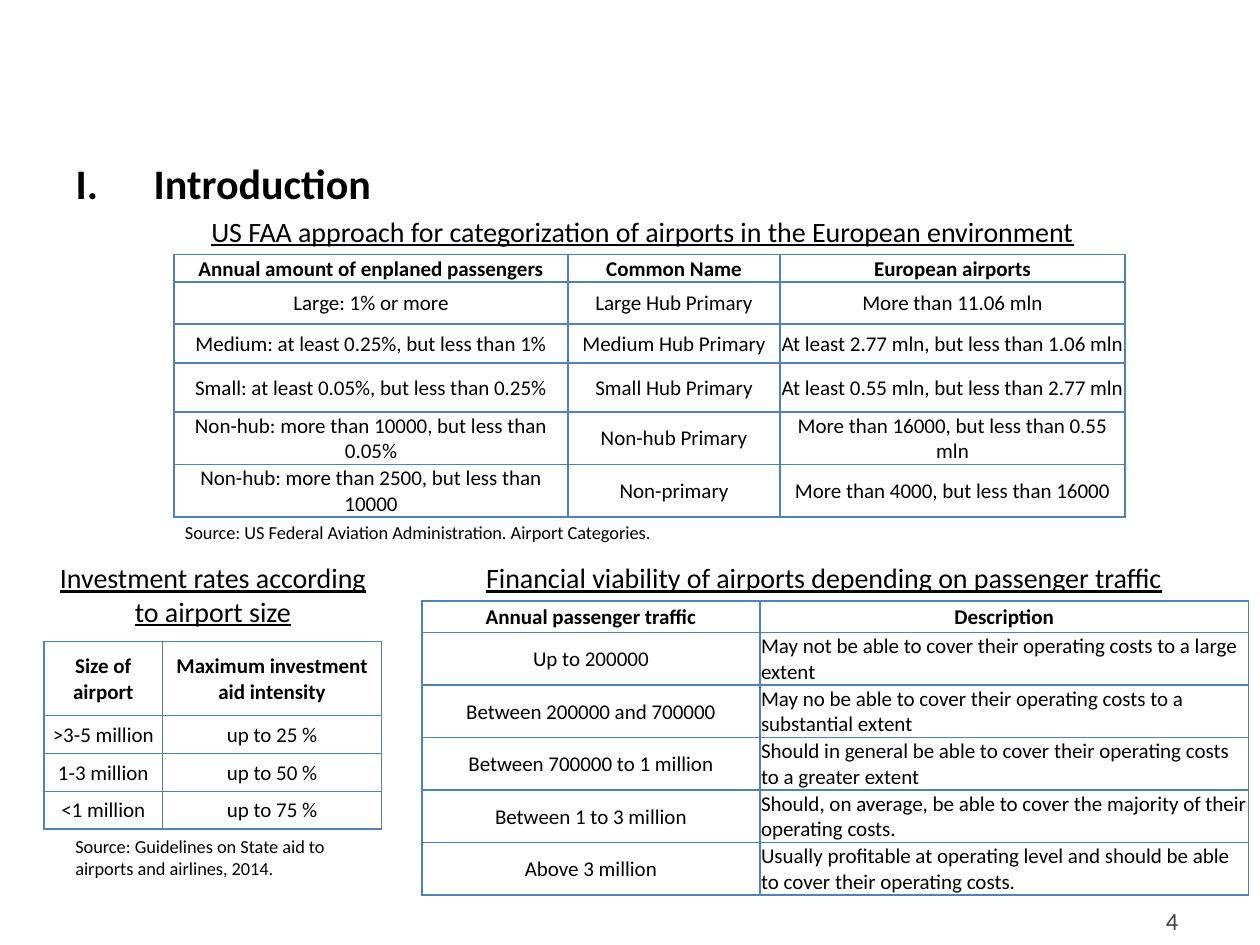
from dataclasses import dataclass

from lxml.etree import SubElement
from pptx import Presentation
from pptx.dml.color import RGBColor
from pptx.enum.text import MSO_ANCHOR, MSO_AUTO_SIZE, PP_ALIGN
from pptx.oxml.ns import qn
from pptx.slide import Slide
from pptx.table import _Cell
from pptx.text.text import _Paragraph
from pptx.util import Inches, Length, Pt


@dataclass(frozen=True)
class Theme:
    font: str = "Calibri"
    ink: str = "000000"
    muted: str = "404040"
    rule: str = "4F81BD"
    rule_width: int = 1
    title: float = 24
    heading: float = 16
    number: float = 14
    cell: float = 12
    source: float = 10.5


@dataclass(frozen=True)
class Area:
    left: float
    top: float
    width: float
    height: float

    def lengths(self) -> tuple[Length, ...]:
        return tuple(map(grid, (self.left, self.top, self.width, self.height)))


@dataclass(frozen=True)
class Label:
    text: str
    area: Area
    size: float
    align: PP_ALIGN = PP_ALIGN.LEFT
    underline: bool = False
    color: str = Theme.ink
    anchor: MSO_ANCHOR = MSO_ANCHOR.TOP


@dataclass(frozen=True)
class TableData:
    left: float
    top: float
    columns: tuple[float, ...]
    rows: tuple[float, ...]
    aligns: tuple[PP_ALIGN, ...]
    cells: tuple[tuple[str, ...], ...]


THEME = Theme()
GRID_COLUMNS, GRID_ROWS = 100, 75
CENTER, LEFT, RIGHT = PP_ALIGN.CENTER, PP_ALIGN.LEFT, PP_ALIGN.RIGHT

LABELS = (
    Label("US FAA approach for categorization of airports in the European environment",
          Area(14.1, 16.5, 73.8, 3.7), THEME.heading, CENTER, True),
    Label("Investment rates according to airport size",
          Area(3.5, 44, 26.8, 6.4), THEME.heading, CENTER, True),
    Label("Financial viability of airports depending on passenger traffic",
          Area(37.5, 44, 55.8, 3.7), THEME.heading, CENTER, True),
    Label("Source: US Federal Aviation Administration. Airport Categories.",
          Area(13.7, 40.9, 50, 2.9), THEME.source),
    Label("Source: Guidelines on State aid to airports and airlines, 2014.",
          Area(5, 65.8, 22.6, 4.7), THEME.source),
    Label("4", Area(71.2, 71.4, 23.3, 3.3), THEME.number, RIGHT,
          color=THEME.muted, anchor=MSO_ANCHOR.MIDDLE),
)

TABLES = (
    TableData(13.8, 20.2, (31.3, 16.8, 27.4), (2.2, 3.3, 3.1, 3.9, 3.9, 3.4), (CENTER,) * 3, (
        ("Annual amount of enplaned passengers", "Common Name", "European airports"),
        ("Large: 1% or more", "Large Hub Primary", "More than 11.06 mln"),
        ("Medium: at least 0.25%, but less than 1%", "Medium Hub Primary",
         "At least 2.77 mln, but less than 1.06 mln"),
        ("Small: at least 0.05%, but less than 0.25%", "Small Hub Primary",
         "At least 0.55 mln, but less than 2.77 mln"),
        ("Non-hub: more than 10000, but less than 0.05%", "Non-hub Primary",
         "More than 16000, but less than 0.55 mln"),
        ("Non-hub: more than 2500, but less than 10000", "Non-primary",
         "More than 4000, but less than 16000"),
    )),
    TableData(3.5, 50.9, (9.4, 17.4), (5.9, 3, 3, 3), (CENTER,) * 2, (
        ("Size of airport", "Maximum investment aid intensity"),
        (">3-5 million", "up to 25 %"),
        ("1-3 million", "up to 50 %"),
        ("<1 million", "up to 75 %"),
    )),
    TableData(33.5, 47.7, (26.8, 38.8), (2.5, 2.3, 2.9, 2.9, 2.9, 4.1), (CENTER, LEFT), (
        ("Annual passenger traffic", "Description"),
        ("Up to 200000", "May not be able to cover their operating costs to a large extent"),
        ("Between 200000 and 700000",
         "May no be able to cover their operating costs to a substantial extent"),
        ("Between 700000 to 1 million",
         "Should in general be able to cover their operating costs to a greater extent"),
        ("Between 1 to 3 million",
         "Should, on average, be able to cover the majority of their operating costs."),
        ("Above 3 million",
         "Usually profitable at operating level and should be able to cover their operating costs."),
    )),
)


def grid(units: float) -> Length:
    return Inches(units * 10 / GRID_COLUMNS)


def style(para: _Paragraph, size: float, align: PP_ALIGN, color: str = THEME.ink,
          bold: bool = False, underline: bool = False) -> None:
    para.alignment = align
    para.font.name = THEME.font
    para.font.size = Pt(size)
    para.font.bold = bold
    para.font.underline = underline
    para.font.color.rgb = RGBColor.from_string(color)


def draw_title(slide: Slide, text: str, area: Area) -> None:
    title = slide.shapes.title
    title.left, title.top, title.width, title.height = area.lengths()
    frame = title.text_frame
    frame.text = text
    frame.auto_size = MSO_AUTO_SIZE.NONE
    frame.vertical_anchor = MSO_ANCHOR.MIDDLE
    para = frame.paragraphs[0]
    properties = para._p.get_or_add_pPr()
    properties.set("marL", str(grid(6.2)))
    properties.set("indent", str(-grid(6.2)))
    SubElement(properties, qn("a:buFont"), typeface=THEME.font)
    SubElement(properties, qn("a:buAutoNum"), type="romanUcPeriod")
    style(para, THEME.title, LEFT, bold=True)


def draw_label(slide: Slide, label: Label) -> None:
    frame = slide.shapes.add_textbox(*label.area.lengths()).text_frame
    frame.word_wrap = True
    frame.vertical_anchor = label.anchor
    frame.text = label.text
    style(frame.paragraphs[0], label.size, label.align, label.color,
          underline=label.underline)


def draw_borders(cell: _Cell) -> None:
    properties = cell._tc.get_or_add_tcPr()
    for side in ("lnL", "lnR", "lnT", "lnB"):
        line = SubElement(properties, qn(f"a:{side}"), w=str(Pt(THEME.rule_width)))
        fill = SubElement(line, qn("a:solidFill"))
        SubElement(fill, qn("a:srgbClr"), val=THEME.rule)


def draw_table(slide: Slide, data: TableData) -> None:
    area = Area(data.left, data.top, sum(data.columns), sum(data.rows))
    table = slide.shapes.add_table(
        len(data.rows), len(data.columns), *area.lengths()).table
    table.first_row = table.horz_banding = False
    for column, width in zip(table.columns, data.columns):
        column.width = grid(width)
    for row, height in zip(table.rows, data.rows):
        row.height = grid(height)
    for row_index, texts in enumerate(data.cells):
        header = row_index == 0
        for column_index, text in enumerate(texts):
            cell = table.cell(row_index, column_index)
            cell.text = text
            cell.vertical_anchor = MSO_ANCHOR.MIDDLE
            cell.margin_left = cell.margin_right = cell.margin_top = grid(0.1)
            cell.margin_bottom = 0
            draw_borders(cell)
            cell.fill.background()
            align = CENTER if header else data.aligns[column_index]
            style(cell.text_frame.paragraphs[0], THEME.cell, align, bold=header)


def main() -> None:
    deck = Presentation()
    deck.slide_width, deck.slide_height = grid(GRID_COLUMNS), grid(GRID_ROWS)
    page = deck.slides.add_slide(deck.slide_layouts.get_by_name("Title Only"))
    draw_title(page, "Introduction", Area(5, 12.3, 90, 4.4))
    for data in TABLES:
        draw_table(page, data)
    for label in LABELS:
        draw_label(page, label)
    deck.save("out.pptx")


if __name__ == "__main__":
    main()
